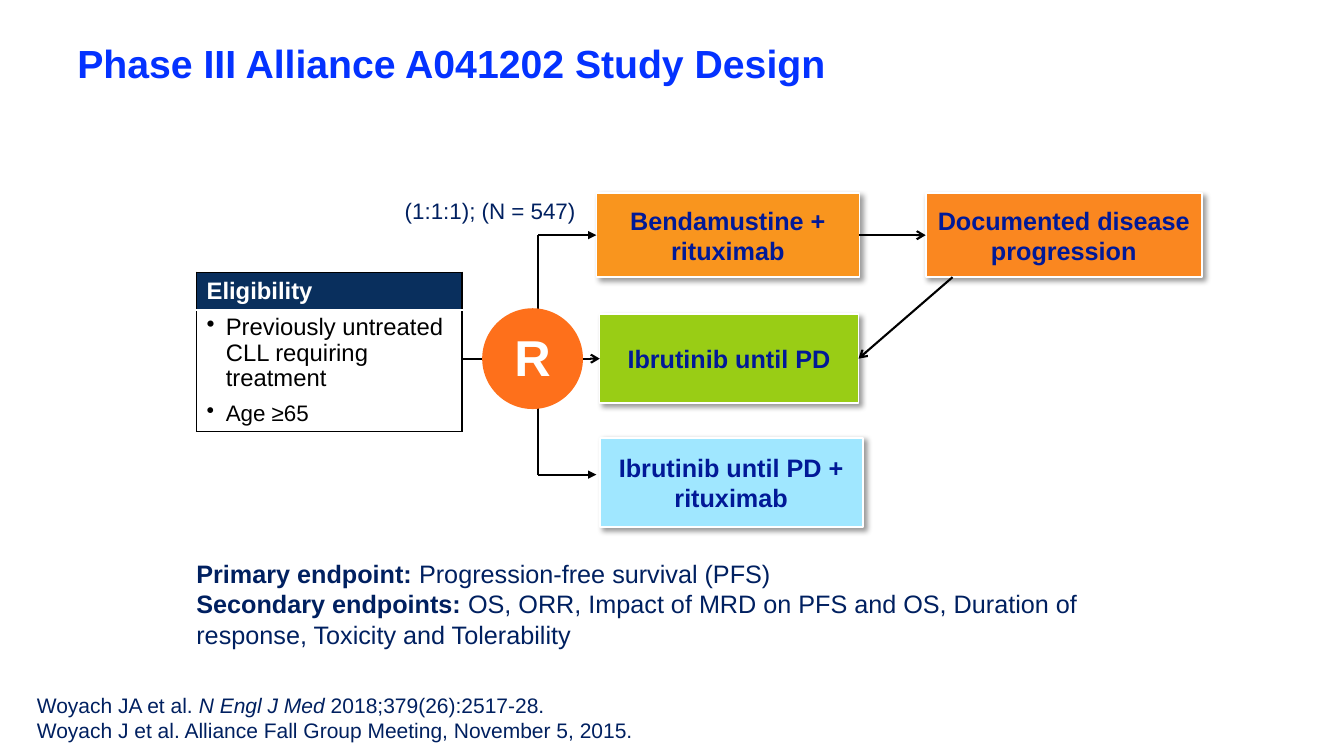
from dataclasses import dataclass

from lxml import etree
from pptx import Presentation
from pptx import util as u
from pptx.dml.color import RGBColor
from pptx.enum import shapes, text
from pptx.oxml import ns, parse_xml

COLUMNS, ROWS = 160, 90


@dataclass(frozen=True)
class Theme:
    font: str = "Arial"
    title: str = "0432FF"
    body: str = "002060"
    box_text: str = "011997"
    black: str = "000000"
    white: str = "FFFFFF"
    header: str = "092F5D"
    chemo: str = "F9951E"
    ibrutinib: str = "99CD15"
    combination: str = "A0E7FF"
    progression: str = "FA8720"
    randomize: str = "FE701B"
    title_size: float = 28
    letter_size: float = 36
    body_size: float = 18
    table_size: float = 17
    label_size: float = 16
    source_size: float = 15


@dataclass(frozen=True)
class Box:
    """Left, top, width and height in grid columns and rows."""
    x: float
    y: float
    w: float
    h: float

    def inner(self, x, y, w=0, h=0):
        return Box(self.x + x, self.y + y, w, h)

    def lengths(self):
        column, row = SLIDE_WIDTH / COLUMNS, SLIDE_HEIGHT / ROWS
        return [int(n) for n in (self.x * column, self.y * row,
                                 self.w * column, self.h * row)]


THEME = Theme()
SLIDE_WIDTH, SLIDE_HEIGHT = u.Inches(13.33), u.Inches(7.5)


def style(font, size, color, bold=False):
    font.name, font.size, font.bold = THEME.font, u.Pt(size), bold
    font.color.rgb = RGBColor.from_string(color)


def add_text(slide, box, paragraphs, size, wrap=True):
    """Each paragraph is a list of (words, emphasis), emphasis being b, i or empty."""
    frame = slide.shapes.add_textbox(*box.lengths()).text_frame
    frame.word_wrap = wrap
    frame.auto_size = text.MSO_AUTO_SIZE.SHAPE_TO_FIT_TEXT
    for index, runs in enumerate(paragraphs):
        paragraph = frame.add_paragraph() if index else frame.paragraphs[0]
        for words, emphasis in runs:
            run = paragraph.add_run()
            run.text = words
            style(run.font, size, THEME.body, emphasis == "b")
            run.font.italic = emphasis == "i"
    return frame


def add_block(slide, box, kind, words, fill, size, color):
    shape = slide.shapes.add_shape(kind, *box.lengths())
    shape.fill.solid()
    shape.fill.fore_color.rgb = RGBColor.from_string(fill)
    shape.line.fill.background()
    shape.shadow.inherit = False
    frame = shape.text_frame
    frame.word_wrap = True
    frame.vertical_anchor = text.MSO_ANCHOR.MIDDLE
    frame.text = words
    paragraph = frame.paragraphs[0]
    paragraph.alignment = text.PP_ALIGN.CENTER
    style(paragraph.runs[0].font, size, color, True)
    return shape


def add_arm(slide, box, words, fill, line_width=1):
    """White-edged treatment box with a soft shadow."""
    shape = add_block(slide, box, shapes.MSO_SHAPE.RECTANGLE, words, fill,
                      THEME.body_size, THEME.box_text)
    shape.line.color.rgb = RGBColor.from_string(THEME.white)
    shape.line.width = u.Pt(line_width)
    shape.text_frame.paragraphs[0].space_after = u.Pt(3)
    effects = shape._element.spPr.find(ns.qn("a:effectLst"))
    effects.append(parse_xml(
        f'<a:outerShdw {ns.nsdecls("a")} blurRad="{u.Pt(4)}" dist="{u.Pt(3)}" '
        f'dir="2700000" algn="tl" rotWithShape="0"><a:srgbClr val="{THEME.black}">'
        '<a:alpha val="40000"/></a:srgbClr></a:outerShdw>'))
    return shape


def add_line(slide, start, end, head=None, begin_at=None, end_at=None):
    connector = slide.shapes.add_connector(
        shapes.MSO_CONNECTOR.STRAIGHT, *start.lengths()[:2], *end.lengths()[:2])
    connector.line.color.rgb = RGBColor.from_string(THEME.black)
    connector.line.width = u.Pt(1.5)
    if head:
        outline = connector._element.spPr.find(ns.qn("a:ln"))
        etree.SubElement(outline, ns.qn("a:tailEnd"), type=head)
    etree.SubElement(connector._element.spPr, ns.qn("a:effectLst"))
    if begin_at:
        connector.begin_connect(*begin_at)
    if end_at:
        connector.end_connect(*end_at)


def set_cell(cell, fill, borders):
    properties = cell._tc.get_or_add_tcPr()
    for side, (color, width) in zip("LRTB", borders):
        properties.append(parse_xml(
            f'<a:ln{side} {ns.nsdecls("a")} w="{u.Pt(width)}"><a:solidFill>'
            f'<a:srgbClr val="{color}"/></a:solidFill></a:ln{side}>'))
    cell.fill.solid()
    cell.fill.fore_color.rgb = RGBColor.from_string(fill)


def add_eligibility(slide, box):
    table = slide.shapes.add_table(2, 1, *box.lengths()).table
    for row, height in zip(table.rows, (4.4, box.h - 4.4)):
        row.height = box.inner(0, 0, 0, height).lengths()[3]
    header, criteria = table.cell(0, 0), table.cell(1, 0)
    edge, divider = (THEME.black, 1), (THEME.white, 1.5)
    set_cell(header, THEME.header, (edge, edge, edge, divider))
    set_cell(criteria, THEME.white, (edge, edge, divider, edge))

    header.text_frame.text = "Eligibility"
    header.vertical_anchor = text.MSO_ANCHOR.MIDDLE
    title = header.text_frame.paragraphs[0]
    title.line_spacing = u.Pt(19.6)
    style(title.runs[0].font, THEME.table_size, THEME.white, True)

    criteria.text_frame.text = "Previously untreated CLL requiring treatment\nAge ≥65"
    sizes = (THEME.table_size, THEME.label_size)
    for index, paragraph in enumerate(criteria.text_frame.paragraphs):
        properties = paragraph._p.get_or_add_pPr()
        properties.set("marL", str(u.Inches(0.19)))
        properties.set("indent", str(-u.Inches(0.19)))
        etree.SubElement(properties, ns.qn("a:buChar"), char="•")
        paragraph.line_spacing = u.Pt(18.4)
        paragraph.space_before = u.Pt(6 if index else 0)
        style(paragraph.runs[0].font, sizes[index], THEME.black)


def add_diagram(slide, box):
    # Eligibility table and treatment arms
    add_eligibility(slide, box.inner(0, 9.4, 31.6, 18.9))
    chemo = add_arm(slide, box.inner(47.6, 0, 31.3, 10),
                    "Bendamustine + rituximab", THEME.chemo)
    ibrutinib = add_arm(slide, box.inner(48, 14.4, 30.8, 10.6),
                        "Ibrutinib until PD", THEME.ibrutinib)
    add_arm(slide, box.inner(48, 29.1, 31.3, 10.6),
            "Ibrutinib until PD + rituximab", THEME.combination, 1.5)
    progression = add_arm(slide, box.inner(86.8, 0, 32.9, 10),
                          "Documented disease progression", THEME.progression, 1.5)

    # Branches from the randomization point
    trunk, upper, middle, lower = 40.7, 5, 19.7, 33.5
    for level in (upper, lower):
        add_line(slide, box.inner(trunk, middle), box.inner(trunk, level))
    add_line(slide, box.inner(trunk, upper), box.inner(47.6, upper), "triangle",
             end_at=(chemo, 1))
    add_line(slide, box.inner(trunk, lower), box.inner(47.6, lower), "triangle")
    add_line(slide, box.inner(31.6, middle), box.inner(48, middle), "arrow",
             end_at=(ibrutinib, 1))

    # Crossover after progression
    add_line(slide, box.inner(78.9, upper), box.inner(86.8, upper), "arrow",
             (chemo, 3), (progression, 1))
    add_line(slide, box.inner(90, 10), box.inner(78.8, middle), "arrow",
             end_at=(ibrutinib, 3))

    # Randomization marker and ratio
    marker = add_block(slide, box.inner(34, 13.7, 12, 12), shapes.MSO_SHAPE.OVAL, "R",
                       THEME.randomize, THEME.letter_size, THEME.white)
    marker.text_frame.margin_top = 0
    add_text(slide, box.inner(23.6, -0.1, 23, 4.4), [[("(1:1:1); (N = 547)", "")]],
             THEME.label_size, wrap=False)


def add_title(slide, box):
    title = slide.shapes.title
    title.left, title.top, title.width, title.height = box.lengths()
    title.text_frame.text = "Phase III Alliance A041202 Study Design"
    title.text_frame.vertical_anchor = text.MSO_ANCHOR.MIDDLE
    paragraph = title.text_frame.paragraphs[0]
    paragraph.alignment = text.PP_ALIGN.LEFT
    style(paragraph.runs[0].font, THEME.title_size, THEME.title, True)


def add_endpoints(slide, box):
    add_text(slide, box, [
        [("Primary endpoint: ", "b"), ("Progression-free survival (PFS)", "")],
        [("Secondary endpoints: ", "b"),
         ("OS, ORR, Impact of MRD on PFS and OS, Duration of response, "
          "Toxicity and Tolerability", "")]], THEME.body_size)


def add_sources(slide, box):
    frame = add_text(slide, box, [
        [("Woyach JA et al. ", ""), ("N Engl J Med ", "i"), ("2018;379(26):2517-28.", "")],
        [("Woyach J et al. Alliance Fall Group Meeting, November 5, 2015.", "")]],
        THEME.source_size)
    frame.margin_left = frame.margin_right = frame.margin_bottom = 0
    frame.margin_top = u.Inches(0.01)


def main():
    presentation = Presentation()
    presentation.slide_width, presentation.slide_height = SLIDE_WIDTH, SLIDE_HEIGHT
    slide = presentation.slides.add_slide(presentation.slide_layouts[5])
    add_title(slide, Box(8, 0, 144, 15))
    add_diagram(slide, Box(23.4, 23, 119.7, 39.7))
    add_endpoints(slide, Box(22.2, 65.9, 118.8, 12.1))
    add_sources(slide, Box(4.4, 82.3, 89.4, 6.2))
    presentation.save("out.pptx")


if __name__ == "__main__":
    main()
